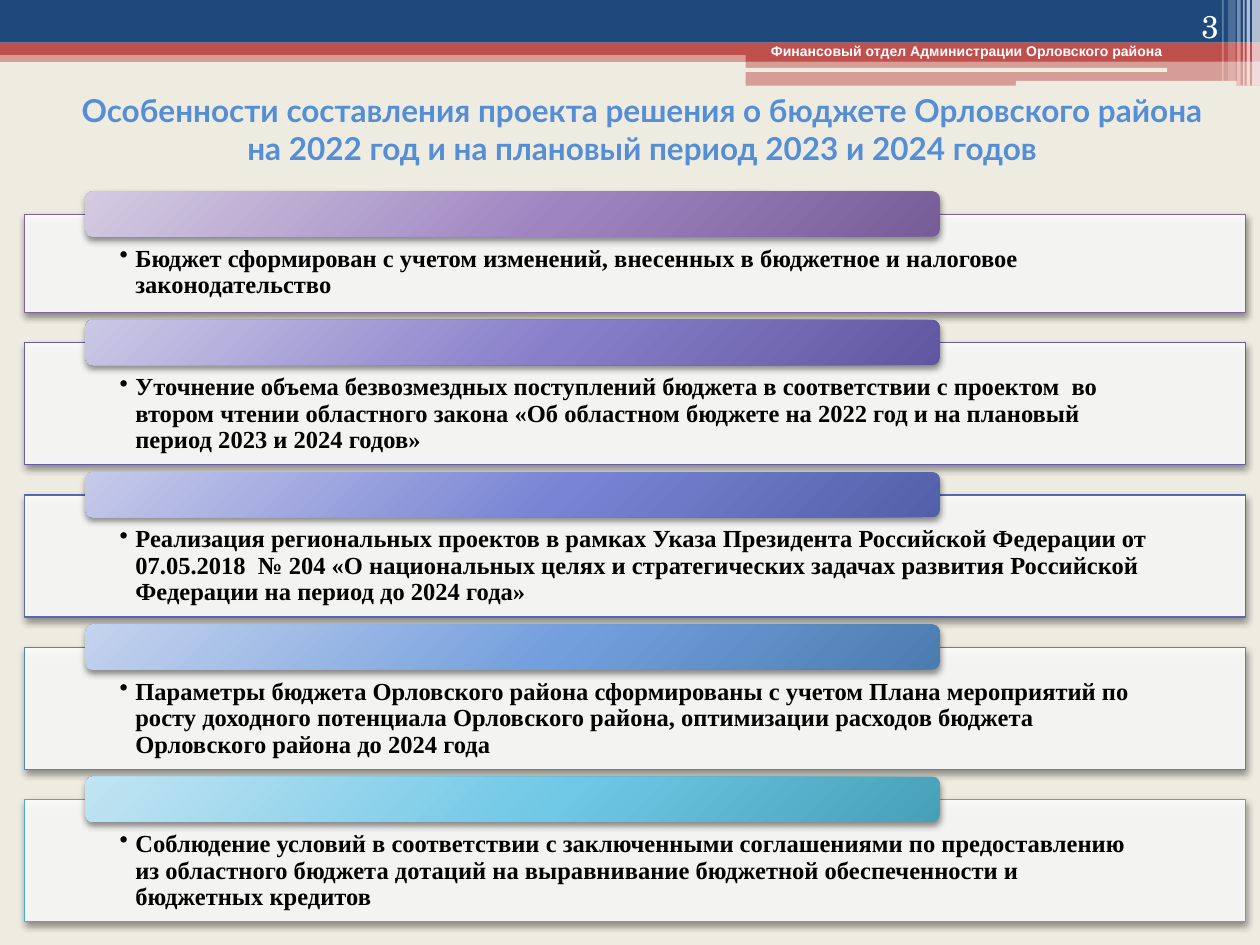
from lxml.etree import SubElement
from pptx import Presentation
from pptx.dml.color import RGBColor
from pptx.enum.shapes import MSO_SHAPE as Preset
from pptx.enum.text import MSO_ANCHOR as Anchor, PP_ALIGN as Align
from pptx.oxml import parse_xml
from pptx.oxml.ns import nsdecls, qn
from pptx.util import Cm, Pt

NAVY, RED, CREAM, WHITE = "1F497D", "C0504D", "EEECE1", "FFFFFF"
SLIDE_W, SLIDE_H = 25.4, 19.05
PANEL_GAP = 0.61

HEADER_BANDS = [
    (0, 1.02, 25.4, 0.23, RED, 50),
    (0, 0, 25.4, 0.86, NAVY, 100),
    (0, 0.86, 25.4, 0.25, RED, 100),
    (15.03, 0.99, 10.37, 0.25, RED, 100),
    (15.03, 1.23, 10.37, 0.5, RED, 50),
]
HEADER_RULES = [(15.02, 1.37, 8.51, 0.08), (20.48, 1.63, 4.45, 0.1)]
HEADER_STRIPES = [
    (25.24, 0.16, 1.73, 65),
    (25.13, 0.07, 1.73, 65),
    (25.06, 0.03, 1.73, 60),
    (24.94, 0.07, 1.73, 40),
    (24.76, 0.15, 1.63, 20),
    (24.64, 0.03, 1.63, 30),
]
FEATURES = [
    ("Бюджет сформирован с учетом изменений, внесенных в бюджетное и налоговое "
     "законодательство", 1.98, "8064A2", ("D4CBE2", "9E85C1", "775D97")),
    ("Уточнение объема безвозмездных поступлений бюджета в соответствии с проектом  во "
     "втором чтении областного закона «Об областном бюджете на 2022 год и на плановый "
     "период 2023 и 2024 годов»", 2.46, "685DAB", ("CBC8E6", "887FCA", "6157A0")),
    ("Реализация региональных проектов в рамках Указа Президента Российской Федерации от "
     "07.05.2018  № 204 «О национальных целях и стратегических задачах развития Российской "
     "Федерации на период до 2024 года»", 2.46, "5767B4", ("C6CAEA", "7985D4", "5160A8")),
    ("Параметры бюджета Орловского района сформированы с учетом Плана мероприятий по "
     "росту доходного потенциала Орловского района, оптимизации расходов бюджета "
     "Орловского района до 2024 года", 2.46, "5185BD", ("C4D3EE", "749FDD", "4B7CB0")),
    ("Соблюдение условий в соответствии с заключенными соглашениями по предоставлению "
     "из областного бюджета дотаций на выравнивание бюджетной обеспеченности и "
     "бюджетных кредитов", 2.46, "4BACC6", ("C2E4F2", "6FC8E6", "46A0B8")),
]


def color(value):
    """Turn a hex string into a colour."""
    return RGBColor.from_string(value)


def add_block(slide, box, fill, opacity=100, preset=Preset.RECTANGLE):
    """Add a borderless preset shape with a solid, possibly see-through fill."""
    block = slide.shapes.add_shape(preset, *map(Cm, box))
    block.shadow.inherit = False
    block.line.fill.background()
    block.fill.solid()
    block.fill.fore_color.rgb = color(fill)
    if opacity < 100:
        tint = block._element.spPr.find(".//" + qn("a:srgbClr"))
        SubElement(tint, qn("a:alpha"), val=str(opacity * 1000))
    return block


def add_shadow(block):
    """Give a shape a soft shadow below it."""
    effects = block._element.spPr.find(qn("a:effectLst"))
    effects.append(parse_xml(
        f'<a:outerShdw {nsdecls("a")} blurRad="50800" dist="25400" dir="5400000" '
        'rotWithShape="0"><a:srgbClr val="000000"><a:alpha val="45000"/></a:srgbClr>'
        '</a:outerShdw>'))


def set_gradient(block, hues):
    """Replace the fill by a radial gradient that starts outside the shape."""
    stops = "".join(f'<a:gs pos="{pos}"><a:srgbClr val="{hue}"/></a:gs>'
                    for pos, hue in zip((0, 55000, 100000), hues))
    solid = block._element.spPr.find(qn("a:solidFill"))
    solid.getparent().replace(solid, parse_xml(
        f'<a:gradFill {nsdecls("a")} rotWithShape="1"><a:gsLst>{stops}</a:gsLst>'
        '<a:path path="circle"><a:fillToRect l="-40000" t="-90000" r="140000" b="190000"/>'
        '</a:path></a:gradFill>'))


def write(paragraph, text, font, size, hue, bold=True, align=Align.LEFT):
    """Add one formatted run to a paragraph."""
    paragraph.alignment = align
    run = paragraph.add_run()
    run.text = text
    run.font.name, run.font.size, run.font.bold = font, Pt(size), bold
    run.font.color.rgb = color(hue)


def add_label(slide, box, anchor, *style, **options):
    """Add a wrapped text box holding one paragraph."""
    frame = slide.shapes.add_textbox(*map(Cm, box)).text_frame
    frame.word_wrap = True
    frame.vertical_anchor = anchor
    write(frame.paragraphs[0], *style, **options)


def add_header(slide, left, top):
    """Draw the coloured bands, stripes and department name along the top edge."""
    for x, y, width, height, hue, opacity in HEADER_BANDS:
        add_block(slide, (left + x, top + y, width, height), hue, opacity)
    for x, y, width, height in HEADER_RULES:
        add_block(slide, (left + x, top + y, width, height), CREAM,
                  preset=Preset.ROUNDED_RECTANGLE)
    for x, width, height, opacity in HEADER_STRIPES:
        add_block(slide, (left + x, top, width, height), WHITE, opacity)
    add_label(slide, (left + 15.29, top + 0.74, 9.32, 0.61), Anchor.TOP,
              "Финансовый отдел Администрации Орловского района", "Arial", 8, WHITE)


def add_feature(slide, box, text, outline, hues):
    """Draw a bulleted panel with a gradient tab over its top edge."""
    left, top, width, _ = box
    panel = add_block(slide, box, WHITE, 90)
    panel.line.color.rgb = color(outline)
    panel.line.width = Pt(0.75)
    add_shadow(panel)
    frame = panel.text_frame
    frame.word_wrap = True
    frame.vertical_anchor = Anchor.TOP
    frame.margin_left = frame.margin_right = Cm(1.91)
    frame.margin_top, frame.margin_bottom = Cm(0.64), Cm(0.28)
    paragraph = frame.paragraphs[0]
    paragraph.level = 1
    paragraph.line_spacing = 0.9
    properties = paragraph._p.get_or_add_pPr()
    properties.set("marL", str(Cm(0.32)))
    properties.set("indent", str(-Cm(0.32)))
    SubElement(properties, qn("a:buChar"), char="•")
    write(paragraph, text, "Times New Roman", 14, "000000")

    tab = add_block(slide, (left + 1.22, top - 0.46, width * 0.7, 0.91), WHITE,
                    preset=Preset.ROUNDED_RECTANGLE)
    set_gradient(tab, hues)
    add_shadow(tab)


def add_features(slide, left, top, width):
    """Stack the feature panels with equal gaps."""
    for text, height, outline, hues in FEATURES:
        add_feature(slide, (left, top, width, height), text, outline, hues)
        top += height + PANEL_GAP


def main():
    """Build and save the slide."""
    deck = Presentation()
    deck.slide_width, deck.slide_height = Cm(SLIDE_W), Cm(SLIDE_H)
    slide = deck.slides.add_slide(deck.slide_layouts[6])
    slide.background.fill.solid()
    slide.background.fill.fore_color.rgb = color(CREAM)
    add_header(slide, 0, 0)
    add_label(slide, (1.3, 1.32, 23.29, 2.57), Anchor.MIDDLE,
              "Особенности составления проекта решения о бюджете Орловского района "
              "на 2022 год и на плановый период 2023 и 2024 годов",
              "Lato", 18, "558ED5", align=Align.CENTER)
    add_features(slide, 0.5, 4.32, 24.61)
    add_label(slide, (22.71, 0, 2.11, 1.02), Anchor.BOTTOM,
              "3", "TeX Gyre Schola", 18, WHITE, bold=False, align=Align.RIGHT)
    deck.save("out.pptx")


if __name__ == "__main__":
    main()
